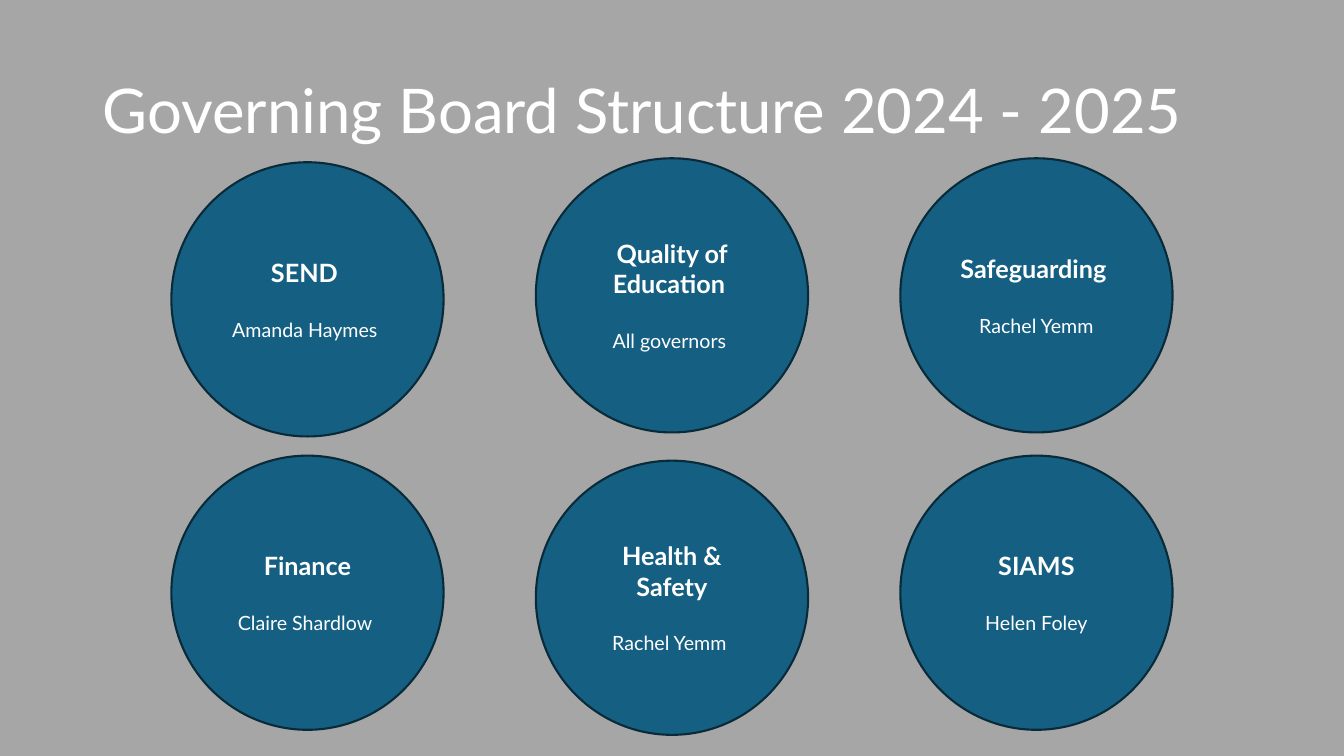
from dataclasses import dataclass

from pptx import Presentation
from pptx.dml.color import RGBColor
from pptx.enum.shapes import MSO_SHAPE
from pptx.enum.text import MSO_ANCHOR, PP_ALIGN
from pptx.slide import Slide
from pptx.text.text import _Paragraph
from pptx.util import Inches, Pt

ELLIPSE = MSO_SHAPE.OVAL
MIDDLE = MSO_ANCHOR.MIDDLE
CENTER = PP_ALIGN.CENTER

GREY = RGBColor(0xA6, 0xA6, 0xA6)
BLUE = RGBColor(0x15, 0x60, 0x82)
NAVY = RGBColor(0x09, 0x2A, 0x39)
WHITE = RGBColor(0xFF, 0xFF, 0xFF)
FONT = "Lato"

# Grid of circles, in inches
GRID_LEFT, GRID_TOP = 1.7, 1.57
COLUMN_STEP, ROW_STEP = 3.615, 2.95
CIRCLE_WIDTH, CIRCLE_HEIGHT = 2.7, 2.72


@dataclass(frozen=True)
class Area:
    """An area of responsibility and who holds it."""
    column: int
    row: int
    heading: str
    holder: str
    drop: float = 0.0


AREAS = (
    Area(1, 0, "Quality of Education ", "All governors "),
    Area(0, 1, "Finance", "Claire Shardlow "),
    Area(2, 0, "Safeguarding ", "Rachel Yemm"),
    Area(0, 0, "SEND ", "Amanda Haymes ", drop=0.04),
    Area(1, 1, "Health & Safety", "Rachel Yemm ", drop=0.05),
    Area(2, 1, "SIAMS", "Helen Foley"),
)


def write(para: _Paragraph, text: str, size: int, bold: bool = False) -> None:
    para.text = text
    for span in para.runs:
        span.font.name = FONT
        span.font.size = Pt(size)
        span.font.bold = bold
        span.font.color.rgb = WHITE


def add_title(page: Slide, text: str) -> None:
    box = page.shapes.add_textbox(Inches(0.92), Inches(0.4), Inches(11.5), Inches(1.45))
    frame = box.text_frame
    frame.word_wrap = True
    frame.vertical_anchor = MIDDLE
    frame.paragraphs[0].line_spacing = 0.9
    write(frame.paragraphs[0], text, 44)


def add_area(page: Slide, area: Area) -> None:
    circle = page.shapes.add_shape(
        ELLIPSE,
        Inches(GRID_LEFT + area.column * COLUMN_STEP),
        Inches(GRID_TOP + area.row * ROW_STEP + area.drop),
        Inches(CIRCLE_WIDTH),
        Inches(CIRCLE_HEIGHT),
    )
    circle.shadow.inherit = False
    circle.fill.solid()
    circle.fill.fore_color.rgb = BLUE
    circle.line.color.rgb = NAVY
    circle.line.width = Pt(1.5)

    frame = circle.text_frame
    frame.word_wrap = True
    frame.vertical_anchor = MIDDLE
    heading, holder = frame.paragraphs[0], frame.add_paragraph()
    heading.alignment = holder.alignment = CENTER
    holder.space_before = Pt(21.6)
    write(heading, area.heading, 18, bold=True)
    write(holder, area.holder, 14)


def main() -> None:
    deck = Presentation()
    deck.slide_width, deck.slide_height = Inches(13.33), Inches(7.5)
    page = deck.slides.add_slide(deck.slide_layouts[6])

    # Background
    page.background.fill.solid()
    page.background.fill.fore_color.rgb = GREY

    # Title and circles
    add_title(page, "Governing Board Structure 2024 - 2025")
    for area in AREAS:
        add_area(page, area)

    deck.save("out.pptx")


if __name__ == "__main__":
    main()
